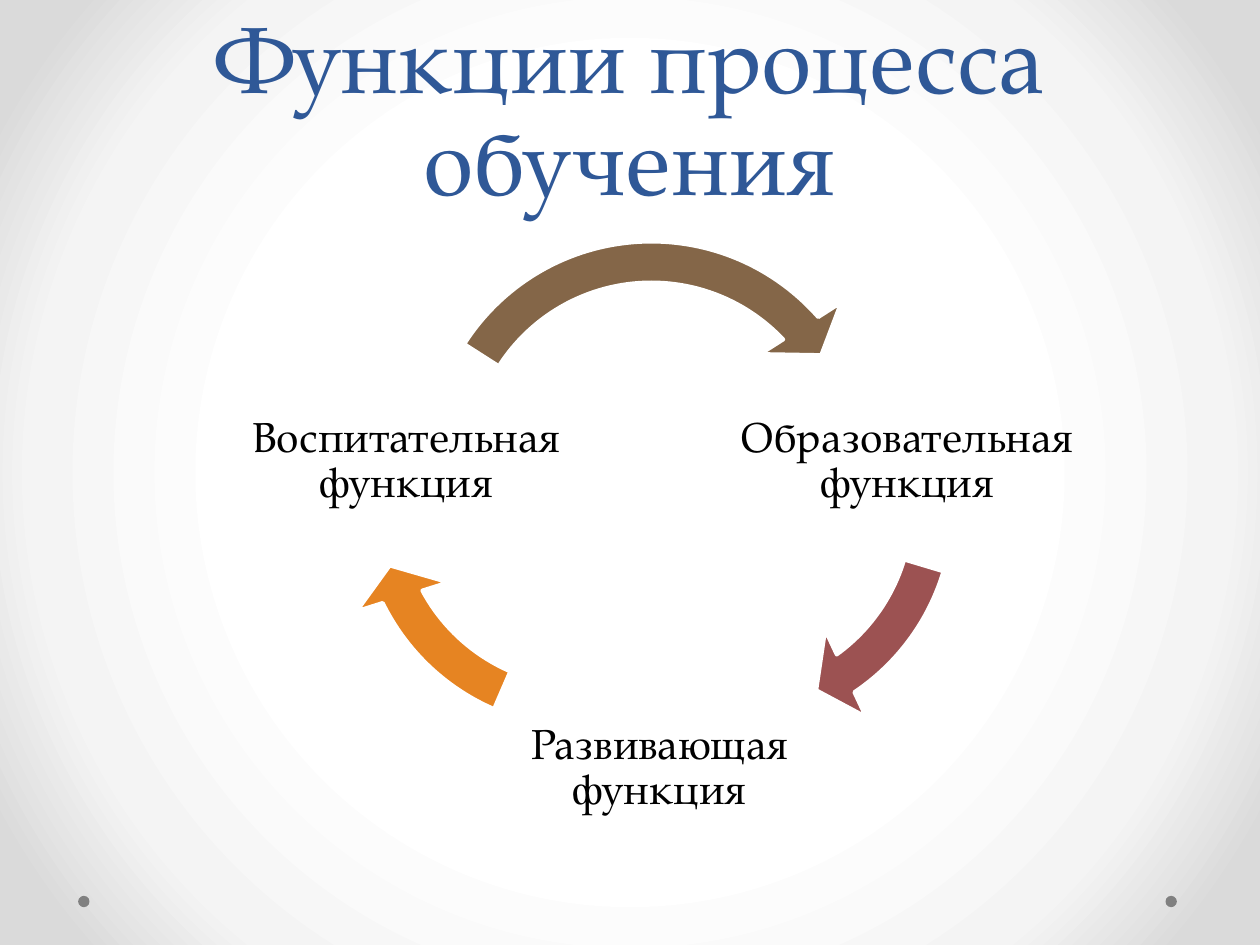
from dataclasses import dataclass

import lxml.etree
import pptx
import pptx.dml.color
import pptx.enum.shapes
import pptx.enum.text
import pptx.oxml.ns
import pptx.util


@dataclass(frozen=True)
class Theme:
    font: str = "TeX Gyre Pagella"
    title: str = "2F5897"
    text: str = "000000"
    dot: str = "808080"
    outline: str = "FFFFFF"
    backdrop: tuple = ((50, "FFFFFF"), (76, "F4F4F4"), (92, "DADADA"))
    title_size: int = 54
    label_size: int = 24
    outline_width: float = 2.25


def color(value):
    return pptx.dml.color.RGBColor.from_string(value)


def write(box, text, *, font, size, ink, spacing, after=0, anchor="MIDDLE", inset=None):
    frame = box.text_frame
    frame.word_wrap = True
    frame.vertical_anchor = getattr(pptx.enum.text.MSO_ANCHOR, anchor)
    if inset is not None:
        for side in ("left", "top", "right", "bottom"):
            setattr(frame, f"margin_{side}", pptx.util.Inches(inset))
    para = frame.paragraphs[0]
    para.alignment = pptx.enum.text.PP_ALIGN.CENTER
    para.line_spacing = spacing
    para.space_after = pptx.util.Pt(after)
    span = para.add_run()
    span.text = text
    span.font.name = font
    span.font.size = pptx.util.Pt(size)
    span.font.color.rgb = color(ink)


class CycleSlide:
    """Draws a cycle of labels and arrows on a grid of 100 columns by 75 rows."""

    def __init__(self, deck, theme):
        self.theme = theme
        self.cell = deck.slide_width / 100
        self.page = deck.slides.add_slide(deck.slide_layouts[6])

    def area(self, *cells):
        return [round(value * self.cell) for value in cells]

    def background(self):
        self.page.background.fill.solid()
        holder = self.page.element.xpath(".//p:bgPr")[0]
        stops = "".join(
            f'<a:gs pos="{share * 1000}"><a:srgbClr val="{tone}"/></a:gs>'
            for share, tone in self.theme.backdrop
        )
        gradient = lxml.etree.fromstring(
            f'<a:gradFill {pptx.oxml.ns.nsdecls("a")} rotWithShape="1">'
            f'<a:gsLst>{stops}</a:gsLst><a:path path="circle">'
            '<a:fillToRect l="50000" t="50000" r="50000" b="50000"/></a:path></a:gradFill>'
        )
        holder.replace(holder[0], gradient)

    def shape(self, kind, cells, fill):
        preset = getattr(pptx.enum.shapes.MSO_SHAPE, kind)
        shape = self.page.shapes.add_shape(preset, *self.area(*cells))
        shape.shadow.inherit = False
        shape.fill.solid()
        shape.fill.fore_color.rgb = color(fill)
        shape.line.fill.background()
        return shape

    def dot(self, column):
        self.shape("OVAL", (column, 71.1, 0.9, 0.9), self.theme.dot)

    def title(self, text):
        box = self.page.shapes.add_textbox(*self.area(5, 0, 90, 17.5))
        write(box, text, font=self.theme.font, size=self.theme.title_size,
              ink=self.theme.title, spacing=pptx.util.Pt(58), anchor="BOTTOM")

    def label(self, text, left, top, width):
        box = self.page.shapes.add_textbox(*self.area(left, top, width, 16.8))
        size = self.theme.label_size
        write(box, text, font=self.theme.font, size=size, ink=self.theme.text,
              spacing=0.9, after=0.35 * size, inset=0.03)

    def arrow(self, left, top, start, end, fill):
        arrow = self.shape("CIRCULAR_ARROW", (left, top, 39.6, 39.6), fill)
        arrow.line.color.rgb = color(self.theme.outline)
        arrow.line.width = pptx.util.Pt(self.theme.outline_width)
        head, finish, begin = (degrees * 0.6 for degrees in (9.6, end, start))
        for index, value in enumerate((0.082, head, finish, begin, 0.096)):
            arrow.adjustments[index] = value


def main():
    deck = pptx.Presentation()
    deck.slide_width, deck.slide_height = pptx.util.Inches(10), pptx.util.Inches(7.5)
    slide = CycleSlide(deck, Theme())
    slide.background()
    for column in (92.5, 6.2):
        slide.dot(column)
    slide.title("Функции процесса обучения")
    stages = (
        ("Образовательная", (55.8, 28.2, 32.4), (38.2, 20.5, 16.66, 55.28, "9C5252")),
        ("Развивающая", (39.8, 52.6, 25.1), (26.4, 20.3, 113.36, 152.98, "E68422")),
        ("Воспитательная", (18.8, 28.2, 26.9), (31.9, 17, 212.57, 317.83, "846648")),
    )
    for name, place, arc in stages:
        slide.label(f"{name} функция", *place)
        slide.arrow(*arc)
    deck.save("out.pptx")


if __name__ == "__main__":
    main()
